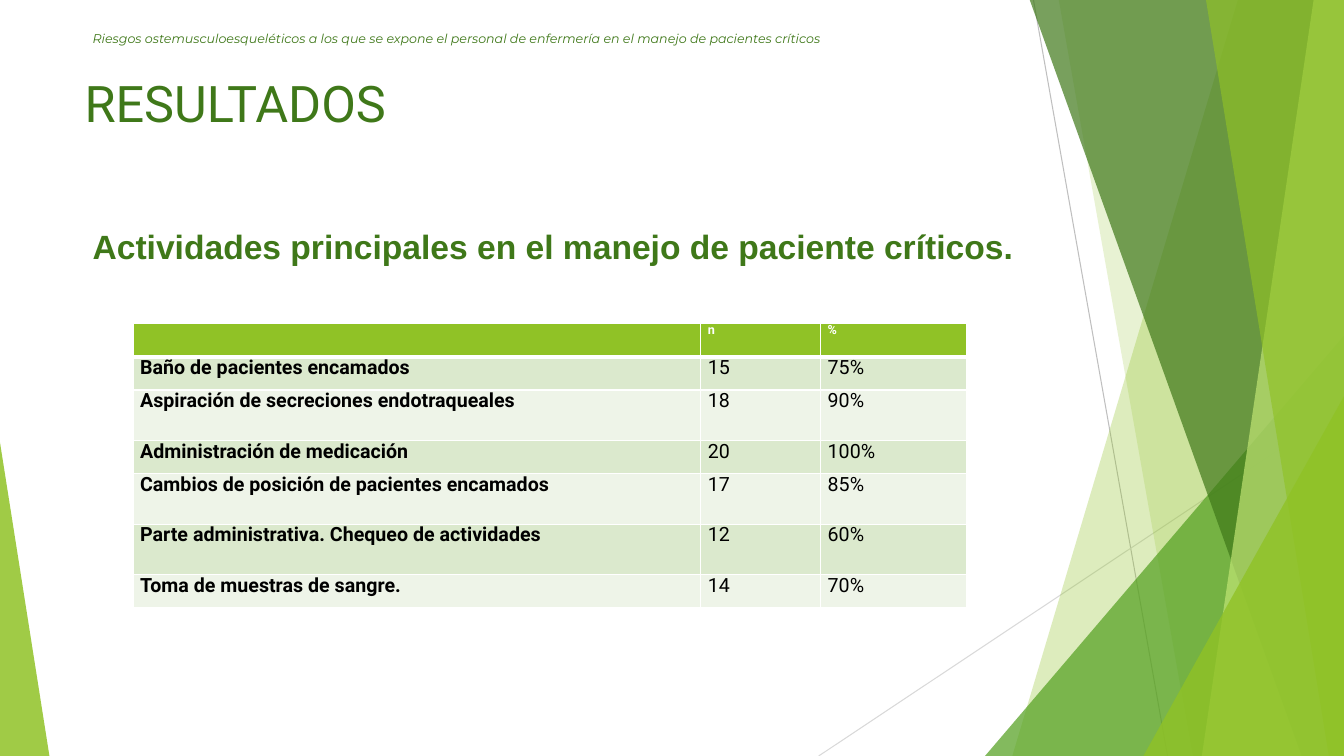
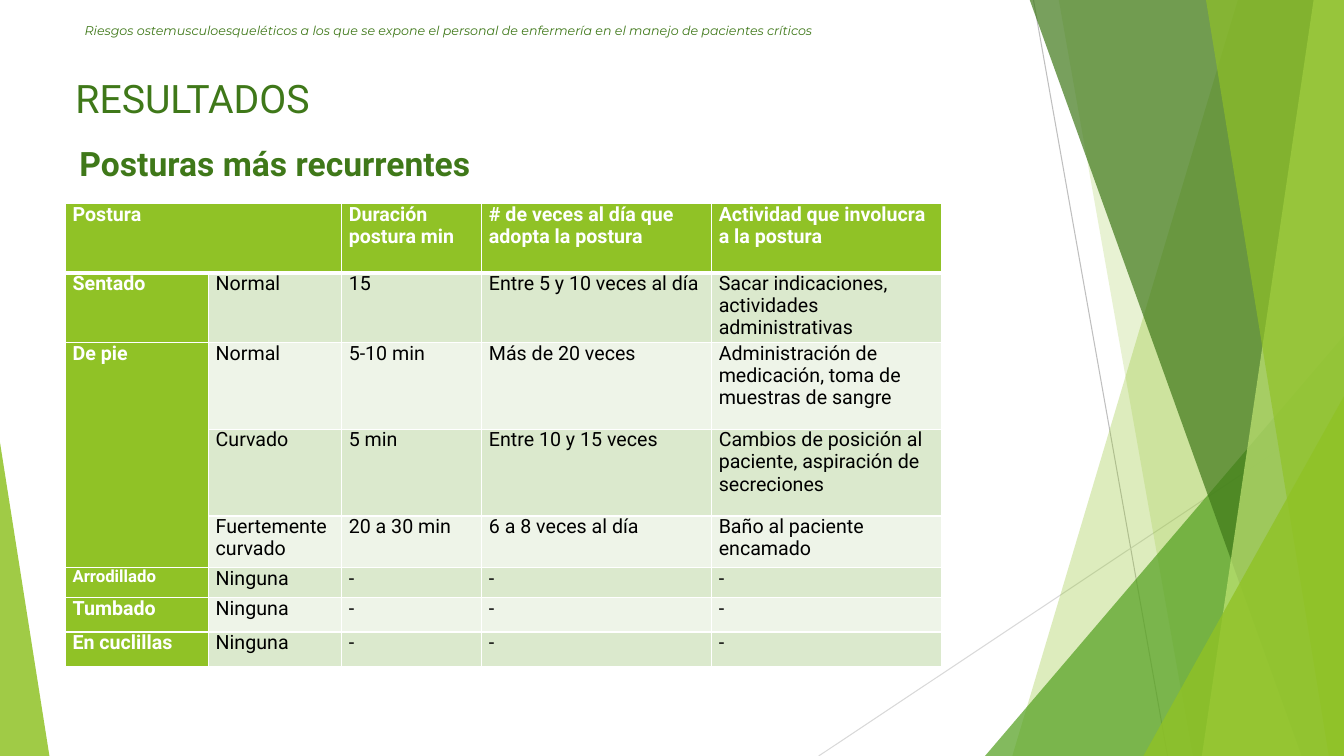
from dataclasses import dataclass, field

from lxml.etree import SubElement
from pptx import Presentation
from pptx.dml.color import RGBColor
from pptx.enum.shapes import MSO_CONNECTOR as CONN, MSO_SHAPE as SHAPE
from pptx.enum.text import MSO_ANCHOR as ANCHOR
from pptx.oxml.ns import qn
from pptx.util import Inches, Pt

W, H = 13.33, 7.5
COLORS = {
    "lime": "90C226", "leaf": "54A021", "forest": "3F7819", "pale": "C0E474",
    "band": "DBE9CD", "band_light": "EEF4E8", "white": "FFFFFF",
    "black": "000000", "gray": "BFBFBF", "gray_light": "D9D9D9",
}
RUNNING_HEAD = ("Riesgos ostemusculoesqueléticos a los que se expone el personal "
                "de enfermería en el manejo de pacientes críticos")


@dataclass
class Ray:
    """Line across the background."""
    start: tuple[float, float]
    end: tuple[float, float]
    color: str


@dataclass
class Facet:
    """Band from the top edge to the bottom, reaching the right edge."""
    top_x: float
    bottom_x: float
    color: str
    alpha: int


@dataclass
class Corner:
    """Right triangle standing on the bottom edge."""
    left: float
    top: float
    width: float
    apex: float
    color: str
    alpha: int


@dataclass
class Grid:
    left: float
    top: float
    cols: list[float]
    heights: list[float]
    rows: list[list[str]]
    head_size: float = 14
    side_header: bool = False
    merges: list[tuple[int, int, int, int]] = field(default_factory=list)
    sizes: dict[tuple[int, int], float] = field(default_factory=dict)


# Back to front
BACKDROP = [
    Ray((10.25, 0), (11.58, H), "gray"),
    Ray((W, 4.03), (8.12, H), "gray_light"),
    Facet(12.28, 10.04, "lime", 30),
    Facet(10.5, 11.83, "lime", 20),
    Corner(9.77, 3.33, 3.56, 1, "leaf", 72),
    Facet(10.21, 12.91, "forest", 70),
    Facet(13.03, 11.92, "pale", 70),
    Facet(11.96, 13.18, "lime", 65),
    Corner(11.34, 3.93, 1.99, 1, "lime", 80),
    Corner(0, 4.39, 0.49, 0, "lime", 85),
]

ACTIVITIES = Grid(
    1.32, 3.21, [5.63, 1.19, 1.45], [0.33, 0.33, 0.5, 0.33, 0.5, 0.5, 0.33],
    [["", "n", "%"],
     ["Baño de pacientes encamados", "15", "75%"],
     ["Aspiración de secreciones endotraqueales", "18", "90%"],
     ["Administración de medicación", "20", "100%"],
     ["Cambios de posición de pacientes encamados", "17", "85%"],
     ["Parte administrativa. Chequeo de actividades", "12", "60%"],
     ["Toma de muestras de sangre.", "14", "70%"]],
    head_size=9)

POSTURES = Grid(
    0.65, 2.02, [1.42, 1.32, 1.39, 2.28, 2.28],
    [0.69, 0.69, 0.86, 0.86, 0.51, 0.3, 0.34, 0.34],
    [["Postura", "", "Duración postura min", "# de veces al día que adopta la postura",
      "Actividad que involucra a la postura"],
     ["Sentado", "Normal", "15", "Entre 5 y 10 veces al día",
      "Sacar indicaciones, actividades administrativas"],
     ["De pie", "Normal", "5-10 min", "Más de 20 veces",
      "Administración de medicación, toma de muestras de sangre"],
     ["", "Curvado", "5 min", "Entre 10 y 15 veces",
      "Cambios de posición al paciente, aspiración de secreciones"],
     ["", "Fuertemente curvado", "20 a 30 min", "6 a 8 veces al día",
      "Baño al paciente encamado"],
     *[[name, "Ninguna", "-", "-", "-"]
       for name in ("Arrodillado", "Tumbado", "En cuclillas")]],
    side_header=True, merges=[(0, 0, 0, 1), (2, 0, 4, 0)], sizes={(5, 0): 12})


def rgb(name: str) -> RGBColor:
    return RGBColor.from_string(COLORS[name])


def write(tf, text: str, *, size: float, font: str = "Roboto", color: str = "forest",
          bold: bool = False, italic: bool = False, spacing: float | None = None) -> None:
    p = tf.paragraphs[0]
    p.line_spacing = spacing
    p.font.size = Pt(size)
    if not text:
        return
    r = p.add_run()
    r.text = text
    r.font.size, r.font.name = Pt(size), font
    r.font.bold, r.font.italic = bold, italic
    r.font.color.rgb = rgb(color)


def add_text(s, text: str, left: float, top: float, width: float, height: float,
             *, anchor=ANCHOR.TOP, **fmt) -> None:
    box = s.shapes.add_textbox(Inches(left), Inches(top), Inches(width), Inches(height))
    tf = box.text_frame
    tf.word_wrap = True
    tf.vertical_anchor = anchor
    write(tf, text, **fmt)


# Background
def paint(sp, color: str, alpha: int) -> None:
    sp.shadow.inherit = False
    sp.line.fill.background()
    sp.fill.solid()
    sp.fill.fore_color.rgb = rgb(color)
    clr = sp.element.spPr.find(qn("a:solidFill"))[0]
    SubElement(clr, qn("a:alpha"), val=str(alpha * 1000))


def add_ray(s, ray: Ray) -> None:
    ends = [Inches(v) for v in (*ray.start, *ray.end)]
    line = s.shapes.add_connector(CONN.STRAIGHT, *ends)
    line.line.color.rgb = rgb(ray.color)
    line.line.width = Pt(0.75)
    SubElement(line.element.spPr, qn("a:effectLst"))


def add_facet(s, facet: Facet) -> None:
    pts = [(Inches(x), Inches(y)) for x, y in
           ((facet.top_x, -0.01), (W, -0.01), (W, H), (facet.bottom_x, H))]
    outline = s.shapes.build_freeform(*pts[0])
    outline.add_line_segments(pts[1:], close=True)
    paint(outline.convert_to_shape(), facet.color, facet.alpha)


def add_corner(s, corner: Corner) -> None:
    sp = s.shapes.add_shape(SHAPE.ISOSCELES_TRIANGLE, Inches(corner.left), Inches(corner.top),
                            Inches(corner.width), Inches(H - corner.top))
    sp.adjustments[0] = corner.apex
    paint(sp, corner.color, corner.alpha)


DRAW = {Ray: add_ray, Facet: add_facet, Corner: add_corner}


def new_slide(prs):
    s = prs.slides.add_slide(prs.slide_layouts[6])
    for item in BACKDROP:
        DRAW[type(item)](s, item)
    return s


def add_running_head(s, left: float, top: float) -> None:
    add_text(s, RUNNING_HEAD, left, top, 8.98, 0.4, anchor=ANCHOR.MIDDLE,
             size=9, font="Montserrat", italic=True)


# Tables
def set_borders(cell, **widths: float) -> None:
    tc_pr = cell._tc.get_or_add_tcPr()
    for side in "LRTB":
        ln = SubElement(tc_pr, qn(f"a:ln{side}"), w=str(Pt(widths.get(side, 1))))
        fill = SubElement(ln, qn("a:solidFill"))
        SubElement(fill, qn("a:srgbClr"), val=COLORS["white"])


def format_cell(cell, grid: Grid, row: int, col: int) -> None:
    head, side = row == 0, col == 0
    green = head or (side and grid.side_header)
    set_borders(cell, T=3 if row == 1 else 1, B=3 if head else 1)
    cell.fill.solid()
    cell.fill.fore_color.rgb = rgb("lime" if green else "band" if row % 2 else "band_light")
    cell.margin_left = cell.margin_right = Inches(0.07)
    cell.margin_top = cell.margin_bottom = 0
    size = grid.sizes.get((row, col), grid.head_size if head else 14)
    write(cell.text_frame, grid.rows[row][col], size=size, bold=head or side,
          color="white" if green else "black", spacing=0.95)


def add_grid(s, grid: Grid) -> None:
    frame = s.shapes.add_table(len(grid.heights), len(grid.cols), Inches(grid.left),
                               Inches(grid.top), Inches(sum(grid.cols)),
                               Inches(sum(grid.heights)))
    table = frame.table
    table.horz_banding = False
    for column, width in zip(table.columns, grid.cols):
        column.width = Inches(width)
    for row, height in zip(table.rows, grid.heights):
        row.height = Inches(height)
    for i in range(len(grid.heights)):
        for j in range(len(grid.cols)):
            format_cell(table.cell(i, j), grid, i, j)
    for r1, c1, r2, c2 in grid.merges:
        table.cell(r1, c1).merge(table.cell(r2, c2))


def main() -> None:
    prs = Presentation()
    prs.slide_width, prs.slide_height = Inches(W), Inches(H)

    # Main activities
    s = new_slide(prs)
    add_text(s, "Actividades principales en el manejo de paciente críticos.",
             0.82, 2.19, 9.4, 0.21, size=24, font="Arial", bold=True)
    add_grid(s, ACTIVITIES)
    add_running_head(s, 0.82, 0.18)
    add_text(s, "RESULTADOS", 0.74, 0.67, 9.4, 1.44, size=36)

    # Most frequent postures
    s = new_slide(prs)
    add_text(s, "Posturas más recurrentes", 0.69, 1.37, 9.4, 1.44, size=24, bold=True)
    add_grid(s, POSTURES)
    add_running_head(s, 0.74, 0.1)
    add_text(s, "RESULTADOS", 0.65, 0.69, 2.93, 0.57, size=28)

    prs.save("out.pptx")


if __name__ == "__main__":
    main()
